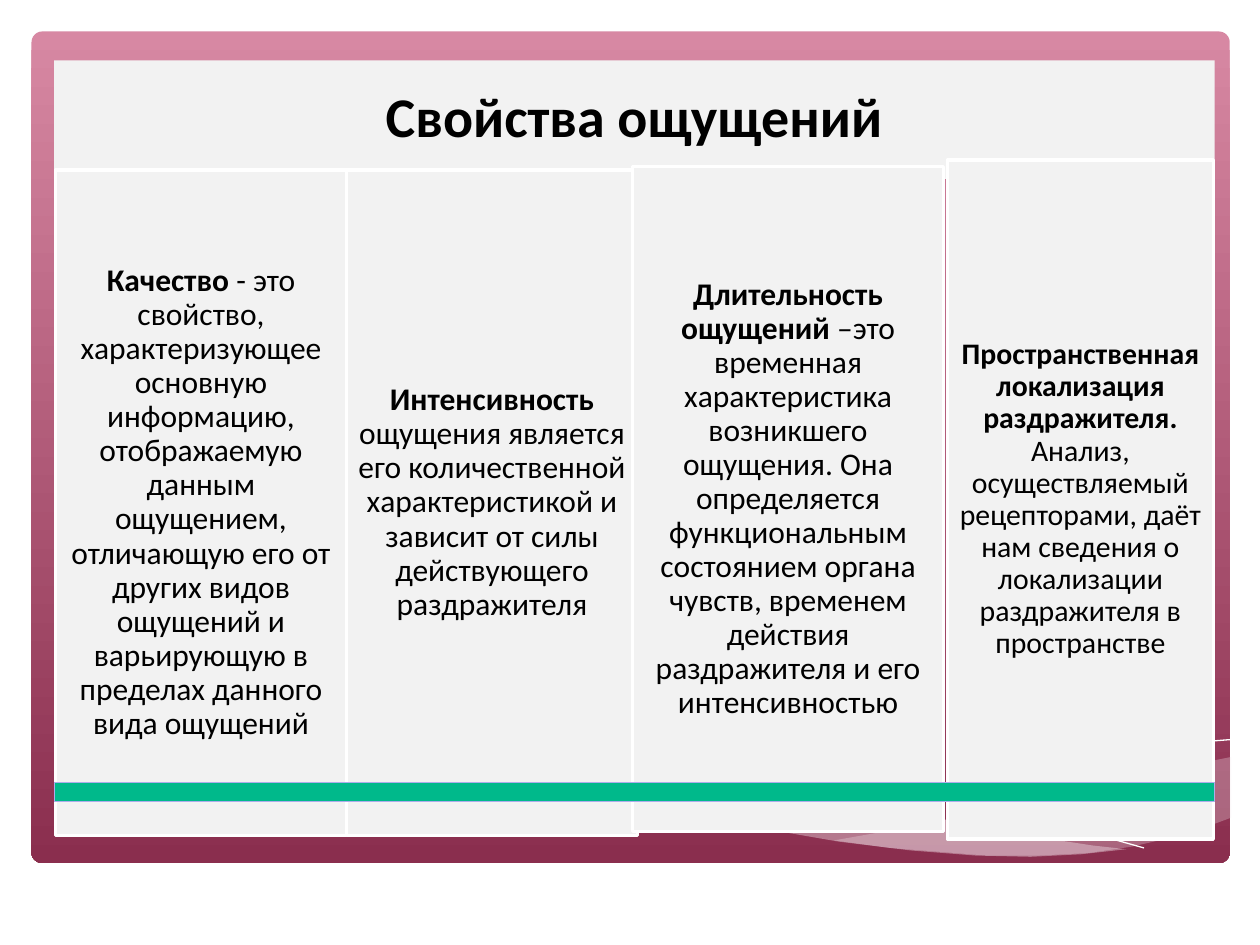
from lxml.etree import SubElement
from pptx import Presentation
from pptx.dml.color import RGBColor
from pptx.enum.shapes import MSO_SHAPE
from pptx.enum.text import MSO_ANCHOR, MSO_AUTO_SIZE, PP_ALIGN
from pptx.oxml.ns import qn
from pptx.util import Inches, Pt

# Content
TITLE = "Свойства ощущений"
# left, top, width, height, size, bold text, plain text
COLUMNS = [
    (0.44, 1.35, 2.31, 5.28, 18, "Качество",
     " - это свойство, характеризующее основную информацию, отображаемую "
     "данным ощущением, отличающую его от других видов ощущений и "
     "варьирующую в пределах данного вида ощущений"),
    (2.75, 1.35, 2.31, 5.28, 18, "Интенсивность",
     " ощущения является его количественной характеристикой и зависит от "
     "силы действующего раздражителя"),
    (5.02, 1.32, 2.47, 5.28, 18, "Длительность ощущений ",
     "–это временная характеристика возникшего ощущения. Она определяется "
     "функциональным состоянием органа чувств, временем действия "
     "раздражителя и его интенсивностью"),
    (7.52, 1.27, 2.11, 5.39, 17, "Пространственная локализация раздражителя. ",
     "Анализ, осуществляемый рецепторами, даёт нам сведения о локализации "
     "раздражителя в пространстве"),
]
# Background waves: opacity in percent and outline points
WAVES = [
    (29, [(9.76, 6.01), (9.36, 6.09), (8.92, 6.18), (8.33, 6.32), (7.8, 6.44),
          (7.3, 6.55), (6.62, 6.67), (7.06, 6.73), (7.45, 6.76), (7.82, 6.79),
          (8.25, 6.79), (8.64, 6.77), (8.98, 6.72), (9.29, 6.65), (9.5, 6.59),
          (9.77, 6.49), (9.77, 6.01)]),
    (40, [(8.94, 6.74), (8.67, 6.71), (8.08, 6.62), (7.42, 6.49), (6.69, 6.33),
          (5.99, 6.16), (5.42, 6.05), (4.89, 5.96), (4.42, 5.91), (4, 5.88),
          (3.62, 5.88), (3.28, 5.89), (2.87, 5.93), (3.43, 6.01), (4.05, 6.13),
          (4.5, 6.23), (5.3, 6.42), (6.02, 6.57), (6.66, 6.68), (7.23, 6.75),
          (7.74, 6.79), (8.18, 6.8), (8.58, 6.78)]),
]
CURVES = [
    [(3.1, 5.97), (3.29, 5.94), (3.63, 5.9), (4.02, 5.89), (4.5, 5.89),
     (5.1, 5.94), (5.57, 5.98), (6.09, 6.05), (6.65, 6.15), (7.28, 6.28),
     (7.96, 6.43), (8.69, 6.62), (9.08, 6.73)],
    [(6.14, 6.58), (6.53, 6.48), (6.96, 6.37), (7.48, 6.24), (8.07, 6.12),
     (8.67, 6), (9.11, 5.94), (9.51, 5.89), (9.76, 5.87)],
]
BAND_LEFT, BAND_WIDTH = 0.43, 9.21
PANEL, WHITE, WAVE = "F2F2F2", "FFFFFF", "F4E7ED"


def rgb(value):
    return RGBColor.from_string(value)


def style(sp, fill=None, line=None, width=0.75):
    sp.shadow.inherit = False
    if fill:
        sp.fill.solid()
        sp.fill.fore_color.rgb = rgb(fill)
    else:
        sp.fill.background()
    if line:
        sp.line.color.rgb = rgb(line)
        sp.line.width = Pt(width)
    else:
        sp.line.fill.background()
    return sp


def add_box(kind, *box):
    return s.shapes.add_shape(kind, *map(Inches, box))


def add_path(points, close):
    pts = [(Inches(x), Inches(y)) for x, y in points]
    builder = s.shapes.build_freeform(*pts[0])
    builder.add_line_segments(pts[1:], close=close)
    return builder.convert_to_shape()


def write(sp, runs, size, inset):
    tf = sp.text_frame
    frame = {"word_wrap": True, "auto_size": MSO_AUTO_SIZE.NONE,
             "vertical_anchor": MSO_ANCHOR.MIDDLE}
    frame |= {f"margin_{side}": Inches(inset)
              for side in ("left", "top", "right", "bottom")}
    for name, value in frame.items():
        setattr(tf, name, value)
    p = tf.paragraphs[0]
    p.alignment, p.line_spacing = PP_ALIGN.CENTER, 0.9
    for text, bold in runs:
        r = p.add_run()
        r.text = text
        for name, value in {"name": "Calibri", "size": Pt(size), "bold": bold}.items():
            setattr(r.font, name, value)
        r.font.color.rgb = rgb("000000")


prs = Presentation()
prs.slide_width, prs.slide_height = Inches(10), Inches(7.5)
s = prs.slides.add_slide(prs.slide_layouts[5])

# Gradient frame
frame = style(add_box(MSO_SHAPE.ROUNDED_RECTANGLE, 0.25, 0.25, 9.51, 6.6))
frame.adjustments[0] = 0.013
frame.fill.gradient()
frame.fill.gradient_angle = 270
for stop, position, color in zip(frame.fill.gradient_stops, (0, 1), ("D788A3", "8A2E4E")):
    stop.position = position
    stop.color.rgb = rgb(color)

# Waves and thin curves
for opacity, points in WAVES:
    wave = style(add_path(points, True), WAVE)
    color = wave.fill._xPr.find(qn("a:solidFill"))[0]
    SubElement(color, qn("a:alpha")).set("val", str(opacity * 1000))
for points in CURVES:
    style(add_path(points, False), line=WHITE)

# Title band, raised above the background
title = s.shapes.title
s.shapes._spTree.append(title._element)
for name, value in zip(("left", "top", "width", "height"),
                       (BAND_LEFT, 0.48, BAND_WIDTH, 0.94)):
    setattr(title, name, Inches(value))
style(title, PANEL)
write(title, [(TITLE, True)], 32, 0.13)

# Columns
for *box, size, term, text in COLUMNS:
    column = style(add_box(MSO_SHAPE.RECTANGLE, *box), PANEL, WHITE, 2)
    write(column, [(term, True), (text, False)], size, 0.07)

# Green bar
style(add_box(MSO_SHAPE.RECTANGLE, BAND_LEFT, 6.21, BAND_WIDTH, 0.15), "00B98B", "ADADEB")

prs.save("out.pptx")
